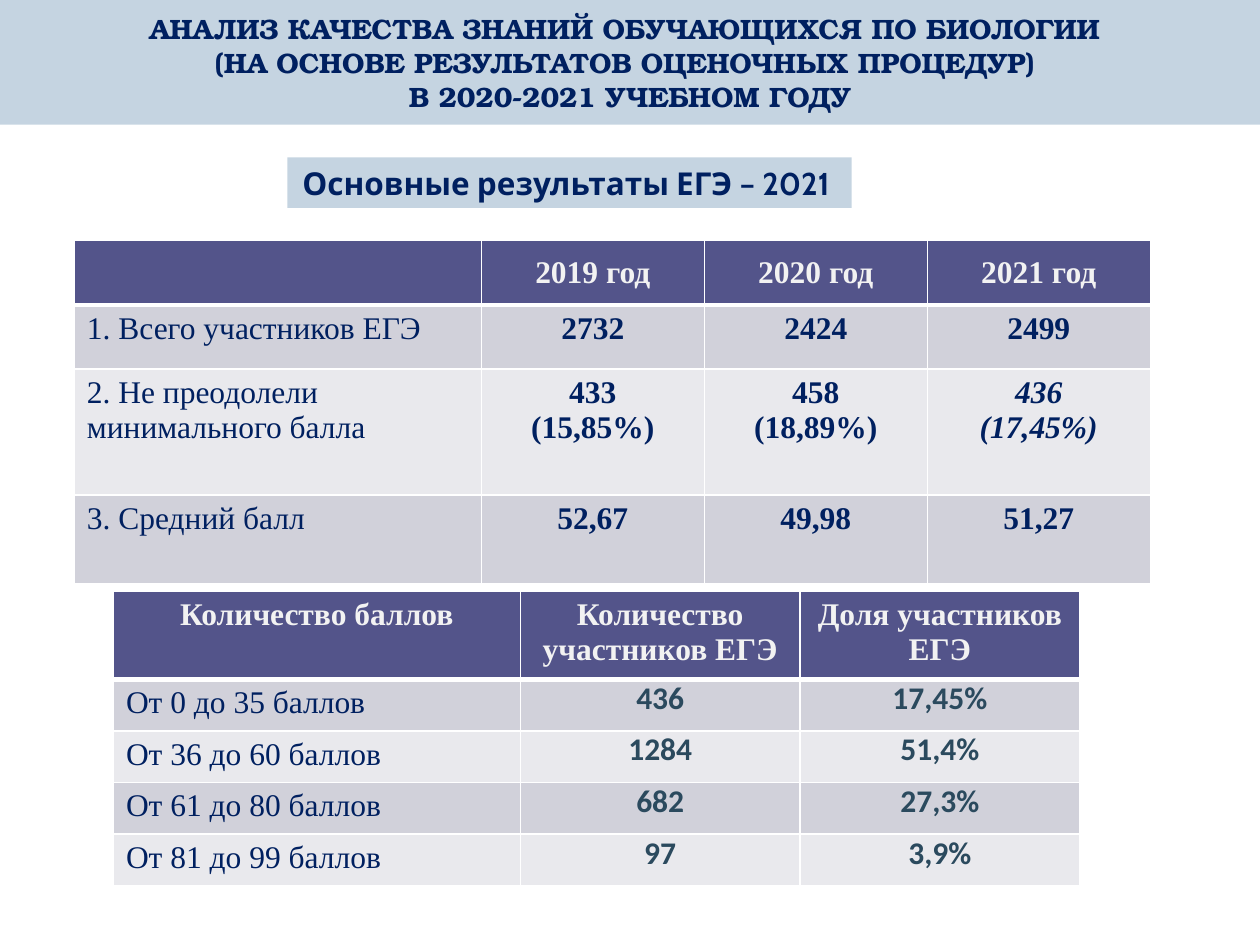
import pptx
import pptx.dml.color
import pptx.enum.text
import pptx.oxml.ns
import pptx.util
import lxml.etree

Inches = pptx.util.Inches
Pt = pptx.util.Pt
ALIGN = pptx.enum.text.PP_ALIGN
ANCHOR = pptx.enum.text.MSO_ANCHOR
AUTO = pptx.enum.text.MSO_AUTO_SIZE

NAVY, TEAL, PALE, WHITE = "002060", "2B4A5E", "C5D4E1", "FFFFFF"
HEADER, HEADER_TEXT = "53548A", "F2F2F2"
BANDS = ["D1D1DA", "E9E9ED"]
SERIF = "Times New Roman"

TITLE = [
    "АНАЛИЗ КАЧЕСТВА ЗНАНИЙ ОБУЧАЮЩИХСЯ ПО БИОЛОГИИ ",
    "(НА ОСНОВЕ РЕЗУЛЬТАТОВ ОЦЕНОЧНЫХ ПРОЦЕДУР) ",
    "В 2020-2021 УЧЕБНОМ ГОДУ",
]
RESULTS = [
    ["", "2019 год", "2020 год", "2021 год"],
    ["1. Всего участников ЕГЭ", "2732", "2424", "2499"],
    ["2. Не преодолели минимального балла",
     "433\n(15,85%)", "458\n(18,89%)", "436\n(17,45%)"],
    ["3. Средний балл", "52,67", "49,98", "51,27"],
]
SCORES = [
    ["Количество баллов", "Количество участников ЕГЭ", "Доля участников ЕГЭ"],
    ["От 0 до 35 баллов", "436", "17,45%"],
    ["От 36 до 60 баллов", "1284", "51,4%"],
    ["От 61 до 80 баллов", "682", "27,3%"],
    ["От 81 до 99 баллов", "97", "3,9%"],
]


def rgb(color):
    return pptx.dml.color.RGBColor.from_string(color)


def paint(obj, color):
    obj.fill.solid()
    obj.fill.fore_color.rgb = rgb(color)


def add_run(p, text, font, size, color, bold=True, italic=False):
    r = p.add_run()
    r.text = text
    r.font.name = font
    r.font.size = Pt(size)
    r.font.color.rgb = rgb(color)
    r.font.bold = bold
    r.font.italic = italic


def set_borders(cell, top, bottom):
    tcPr = cell._tc.get_or_add_tcPr()
    for side, width in (("L", 1), ("R", 1), ("T", top), ("B", bottom)):
        ln = lxml.etree.SubElement(tcPr, pptx.oxml.ns.qn("a:ln" + side), w=str(Pt(width)))
        fill = lxml.etree.SubElement(ln, pptx.oxml.ns.qn("a:solidFill"))
        lxml.etree.SubElement(fill, pptx.oxml.ns.qn("a:srgbClr"), val=WHITE)


def set_margins(cell, side, end):
    cell.margin_left = cell.margin_right = Inches(side)
    cell.margin_top = cell.margin_bottom = Inches(end)


def set_title(slide):
    sp = slide.shapes.title
    sp.left, sp.top, sp.width, sp.height = 0, 0, Inches(10), Inches(0.99)
    paint(sp, PALE)
    tf = sp.text_frame
    tf.auto_size = AUTO.NONE
    tf.vertical_anchor = ANCHOR.MIDDLE
    p = tf.paragraphs[0]
    p.alignment = ALIGN.CENTER
    for i, line in enumerate(TITLE):
        if i:
            p.add_line_break()
        add_run(p, line, "TeX Gyre Bonum", 16, NAVY)


def add_caption(slide, text):
    sp = slide.shapes.add_textbox(Inches(2.28), Inches(1.25), Inches(4.48), Inches(0.4))
    paint(sp, PALE)
    tf = sp.text_frame
    tf.word_wrap = False
    tf.auto_size = AUTO.SHAPE_TO_FIT_TEXT
    p = tf.paragraphs[0]
    p.alignment = ALIGN.CENTER
    add_run(p, text, "Cabin", 18, NAVY)


def add_table(slide, left, top, data, widths, heights, value_font, value_color,
              value_margins=(0.1, 0.05), header_anchor=ANCHOR.TOP, italic_cell=None):
    table = slide.shapes.add_table(
        len(data), len(widths), Inches(left), Inches(top),
        Inches(sum(widths)), Inches(sum(heights))).table
    for col, width in zip(table.columns, widths):
        col.width = Inches(width)
    for row, height in zip(table.rows, heights):
        row.height = Inches(height)

    for i, values in enumerate(data):
        for j, text in enumerate(values):
            cell = table.cell(i, j)
            head, label = i == 0, j == 0
            set_borders(cell, 3 if i == 1 else 1, 3 if head else 1)
            paint(cell, HEADER if head else BANDS[(i - 1) % 2])
            cell.vertical_anchor = header_anchor if head else ANCHOR.TOP
            is_value = not head and not label
            set_margins(cell, *(value_margins if is_value else (0.1, 0.05)))
            font = value_font if is_value else SERIF
            color = HEADER_TEXT if head else NAVY if label else value_color
            if not text:
                continue
            tf = cell.text_frame
            for n, line in enumerate(text.split("\n")):
                p = tf.add_paragraph() if n else tf.paragraphs[0]
                p.alignment = ALIGN.CENTER if head or not label else ALIGN.LEFT
                add_run(p, line, font, 18, color, head or not label, (i, j) == italic_cell)


def main():
    prs = pptx.Presentation()
    prs.slide_width, prs.slide_height = Inches(10), Inches(7.5)
    slide = prs.slides.add_slide(prs.slide_layouts[5])

    # Heading and caption
    set_title(slide)
    add_caption(slide, "Основные результаты ЕГЭ – 2021 ")

    # Results by year
    add_table(slide, 0.59, 1.91, RESULTS, [3.23] + [1.77] * 3, [0.51, 0.51, 1, 0.7],
              SERIF, NAVY, header_anchor=ANCHOR.MIDDLE, italic_cell=(2, 3))

    # Participants by score range
    add_table(slide, 0.9, 4.69, SCORES, [3.23] + [2.22] * 2, [0.68] + [0.41] * 4,
              "Calibri", TEAL, value_margins=(0.07, 0))

    prs.save("out.pptx")


if __name__ == "__main__":
    main()
